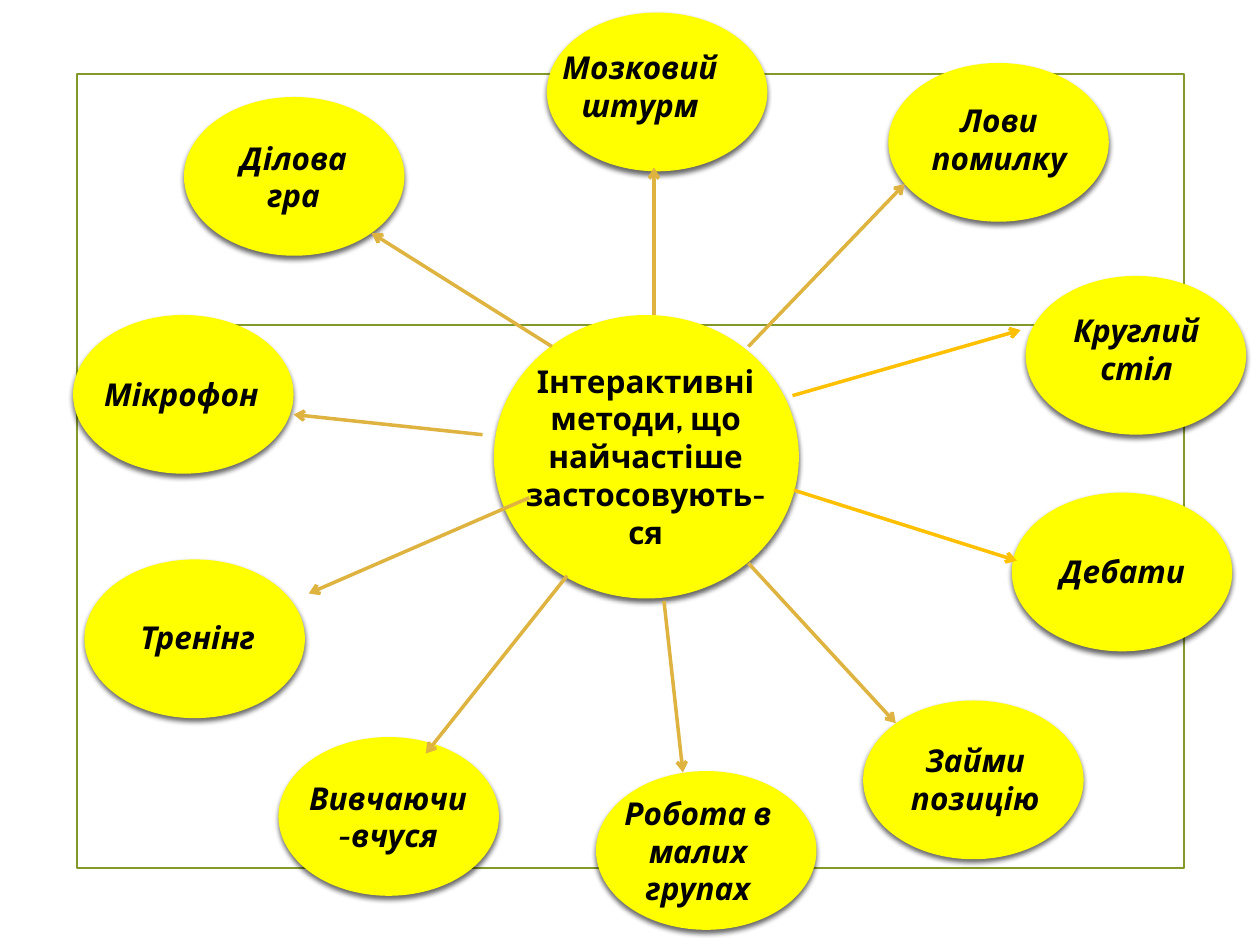
from lxml import etree
from pptx import Presentation
from pptx.dml.color import RGBColor
from pptx.enum.shapes import MSO_CONNECTOR as CONN, MSO_SHAPE as SHAPE
from pptx.enum.text import MSO_AUTO_SIZE as FIT, PP_ALIGN as ALIGN
from pptx.oxml import parse_xml
from pptx.oxml.ns import nsdecls, qn
from pptx.util import Inches, Pt

FONT = "Cabin"
YELLOW, GREEN, GOLD, AMBER, BLACK = "FFFF00", "83992A", "DEB340", "FFC000", "000000"
BUBBLE_W, BUBBLE_H = 1.75, 1.26
LABEL_W = 1.5

SHADOW = f"""<a:effectLst {nsdecls('a')}>
  <a:outerShdw blurRad="38100" dist="25400" dir="5400000" rotWithShape="0">
    <a:srgbClr val="000000"><a:alpha val="60000"/></a:srgbClr>
  </a:outerShdw>
</a:effectLst>"""

# label, bubble left/top, label left/top/height, arrow from, arrow to, arrow colour
METHODS = [
    ("Мозковий штурм", (4.34, 0.1), (4.33, 0.33, 0.71), (5.19, 2.5), (5.19, 1.33), GOLD),
    ("Лови помилку", (7.05, 0.5), (7.18, 0.75, 0.71), (5.94, 2.75), (7.18, 1.46), GOLD),
    ("Круглий стіл", (8.14, 2.19), (8.27, 2.42, 0.71), (6.29, 3.14), (8.1, 2.62), AMBER),
    ("Дебати", (8.03, 3.91), (8.16, 4.33, 0.4), (6.3, 3.89), (8.07, 4.45), AMBER),
    ("Робота в малих групах", (4.73, 6.12), (4.79, 6.25, 1.01), (5.27, 4.77), (5.42, 6.13), GOLD),
    ("Займи позицію", (6.85, 5.56), (6.99, 5.83, 0.71), (5.94, 4.47), (7.11, 5.74), GOLD),
    ("Тренінг", (0.67, 4.44), (0.82, 4.86, 0.4), (4.2, 3.95), (2.45, 4.71), GOLD),
    ("Вивчаючи-вчуся", (2.21, 5.85), (2.33, 6.13, 0.71), (4.5, 4.57), (3.38, 5.98), GOLD),
    ("Мікрофон", (0.58, 2.5), (0.69, 2.93, 0.4), (3.83, 3.45), (2.33, 3.29), GOLD),
    ("Ділова гра", (1.46, 0.77), (1.58, 1.05, 0.71), (4.38, 2.75), (2.95, 1.85), GOLD),
]


def rgb(value):
    return RGBColor.from_string(value)


class Canvas:
    """Holds the current slide and draws elements in the slide's style."""

    def __init__(self, slide):
        self.shapes = slide.shapes

    def frame(self, x, y, w, h):
        sp = self.shapes.add_shape(SHAPE.RECTANGLE, Inches(x), Inches(y), Inches(w), Inches(h))
        sp.shadow.inherit = False
        sp.fill.background()
        sp.line.color.rgb = rgb(GREEN)
        sp.line.width = Pt(1.25)

    def bubble(self, x, y, w, h):
        sp = self.shapes.add_shape(SHAPE.OVAL, Inches(x), Inches(y), Inches(w), Inches(h))
        sp.fill.solid()
        sp.fill.fore_color.rgb = rgb(YELLOW)
        sp.line.fill.background()
        sp._element.spPr.append(parse_xml(SHADOW))

    def label(self, text, x, y, w, h, italic=True):
        box = self.shapes.add_textbox(Inches(x), Inches(y), Inches(w), Inches(h))
        tf = box.text_frame
        tf.word_wrap = True
        tf.auto_size = FIT.SHAPE_TO_FIT_TEXT
        p = tf.paragraphs[0]
        p.alignment = ALIGN.CENTER
        r = p.add_run()
        r.text = text
        r.font.name = FONT
        r.font.size = Pt(18)
        r.font.bold = True
        r.font.italic = italic
        r.font.color.rgb = rgb(BLACK)

    def line(self, start, end, color, width, arrow=False):
        cx = self.shapes.add_connector(CONN.STRAIGHT, *map(Inches, start + end))
        cx.line.color.rgb = rgb(color)
        cx.line.width = Pt(width)
        if arrow:
            etree.SubElement(cx.line._get_or_add_ln(), qn("a:tailEnd"), type="arrow")
        etree.SubElement(cx._element.spPr, qn("a:effectLst"))


def main():
    prs = Presentation()
    prs.slide_width, prs.slide_height = Inches(10), Inches(7.5)
    canvas = Canvas(prs.slides.add_slide(prs.slide_layouts[6]))

    canvas.frame(0.61, 0.59, 8.79, 6.3)
    canvas.line((1.4, 2.58), (8.61, 2.58), GREEN, 1.25)

    canvas.bubble(3.92, 2.5, 2.42, 2.25)
    canvas.label("Інтерактивні методи, що найчастіше застосовують- ся",
                 3.96, 2.82, 2.33, 1.62, italic=False)

    for text, bubble, (x, y, h), start, end, color in METHODS:
        canvas.bubble(*bubble, BUBBLE_W, BUBBLE_H)
        canvas.label(text, x, y, LABEL_W, h)
        canvas.line(start, end, color, 2, arrow=True)

    prs.save("out.pptx")


if __name__ == "__main__":
    main()
